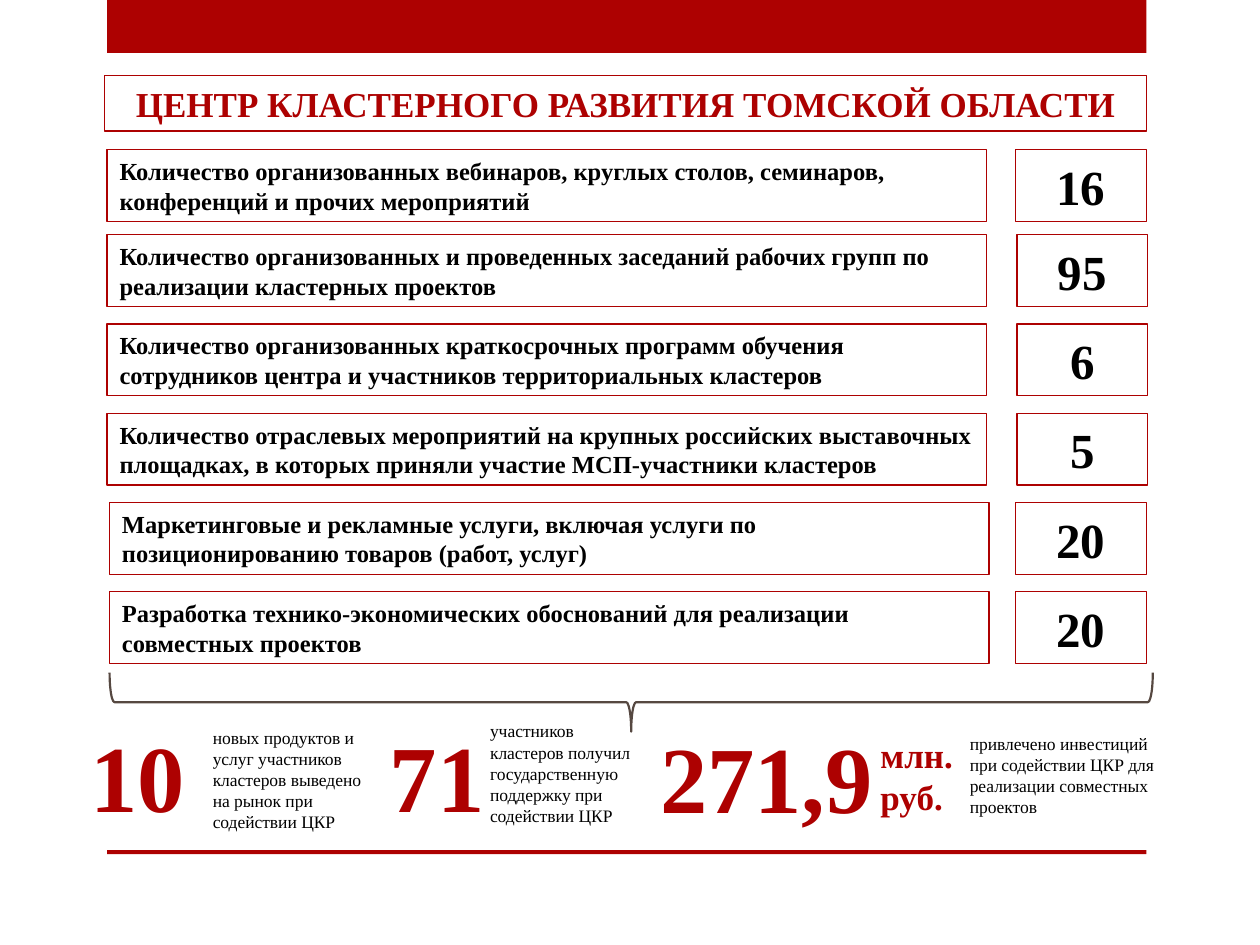
from dataclasses import dataclass

from pptx import Presentation
from pptx.dml.color import RGBColor
from pptx.enum.shapes import MSO_SHAPE
from pptx.enum.text import MSO_ANCHOR, MSO_AUTO_SIZE, PP_ALIGN
from pptx.slide import Slide
from pptx.util import Cm, Pt

RED = RGBColor(0xAD, 0x01, 0x01)
BROWN = RGBColor(0x56, 0x48, 0x41)
BLACK = RGBColor(0x00, 0x00, 0x00)

TITLE = "ЦЕНТР КЛАСТЕРНОГО РАЗВИТИЯ ТОМСКОЙ ОБЛАСТИ"

# label, value, label left, value left
INDICATORS = [
    ("Количество организованных вебинаров, круглых столов, семинаров, "
     "конференций и прочих мероприятий", "16", 2.16, 20.47),
    ("Количество организованных и проведенных заседаний рабочих групп по "
     "реализации кластерных проектов", "95", 2.16, 20.5),
    ("Количество организованных краткосрочных программ обучения "
     "сотрудников центра и участников территориальных кластеров", "6", 2.16, 20.5),
    ("Количество отраслевых мероприятий на крупных российских выставочных "
     "площадках, в которых приняли участие МСП-участники кластеров", "5", 2.16, 20.5),
    ("Маркетинговые и рекламные услуги, включая услуги по "
     "позиционированию товаров (работ, услуг)", "20", 2.21, 20.47),
    ("Разработка технико-экономических обоснований для реализации "
     "совместных проектов", "20", 2.21, 20.47),
]
FIRST_ROW_TOP = 3.02
SECOND_ROW_TOP = 4.73
ROW_PITCH = 1.8
ROW_HEIGHT = 1.45

# number, left, top, width, alignment
RESULT_NUMBERS = [
    ("10", 1.45, 14.35, 2.64, PP_ALIGN.CENTER),
    ("71", 7.49, 14.35, 2.64, PP_ALIGN.CENTER),
    ("271,9", 13.06, 14.38, 5.13, PP_ALIGN.LEFT),
]

# caption, left, top, width, height
RESULT_CAPTIONS = [
    ("новых продуктов и услуг участников кластеров выведено на рынок "
     "при содействии ЦКР", 4.04, 14.53, 3.66, 2.39),
    ("участников кластеров получил государственную поддержку "
     "при содействии ЦКР", 9.63, 14.4, 3.43, 2.39),
    ("привлечено инвестиций при содействии ЦКР для реализации "
     "совместных проектов", 19.3, 14.66, 4.24, 1.96),
]


@dataclass
class SlideBuilder:
    slide: Slide
    font: str = "Times New Roman"
    accent: RGBColor = RED
    outline: float = 0.75

    def fill_text(self, shape, lines, size, color=BLACK, bold=True,
                  align=PP_ALIGN.LEFT, anchor=MSO_ANCHOR.MIDDLE):
        frame = shape.text_frame
        frame.word_wrap = True
        frame.auto_size = MSO_AUTO_SIZE.NONE
        frame.vertical_anchor = anchor
        for index, line in enumerate(lines):
            paragraph = frame.add_paragraph() if index else frame.paragraphs[0]
            paragraph.alignment = align
            run = paragraph.add_run()
            run.text = line
            run.font.name = self.font
            run.font.size = Pt(size)
            run.font.bold = bold
            run.font.color.rgb = color

    def title(self, text, left, top, width, height):
        shape = self.slide.shapes.title
        shape.left, shape.top = Cm(left), Cm(top)
        shape.width, shape.height = Cm(width), Cm(height)
        shape.line.color.rgb = self.accent
        shape.line.width = Pt(self.outline)
        self.fill_text(shape, [text], 20, self.accent, align=PP_ALIGN.CENTER)

    def shape(self, kind, left, top, width, height):
        shape = self.slide.shapes.add_shape(
            kind, Cm(left), Cm(top), Cm(width), Cm(height))
        shape.shadow.inherit = False
        return shape

    def band(self, left, top, width, height):
        shape = self.shape(MSO_SHAPE.RECTANGLE, left, top, width, height)
        shape.fill.solid()
        shape.fill.fore_color.rgb = self.accent
        shape.line.fill.background()

    def box(self, text, left, top, width, height, size, align=PP_ALIGN.LEFT):
        shape = self.shape(MSO_SHAPE.RECTANGLE, left, top, width, height)
        shape.fill.background()
        shape.line.color.rgb = self.accent
        shape.line.width = Pt(self.outline)
        self.fill_text(shape, [text], size, align=align)

    def brace_down(self, left, top, width, height):
        """Add a left brace turned so that it spans the width and points down."""
        shape = self.shape(MSO_SHAPE.LEFT_BRACE, left + (width - height) / 2,
                           top + (height - width) / 2, height, width)
        shape.rotation = 270
        shape.fill.background()
        shape.line.color.rgb = BROWN
        shape.line.width = Pt(1.25)

    def text(self, lines, left, top, width, height, size, **style):
        shape = self.slide.shapes.add_textbox(
            Cm(left), Cm(top), Cm(width), Cm(height))
        self.fill_text(shape, lines, size, anchor=MSO_ANCHOR.TOP, **style)


def main():
    presentation = Presentation()
    presentation.slide_width, presentation.slide_height = Cm(25.4), Cm(19.05)
    title_only = presentation.slide_layouts[5]
    builder = SlideBuilder(presentation.slides.add_slide(title_only))

    builder.band(2.16, 0, 20.95, 1.07)
    builder.band(2.16, 17.14, 20.95, 0.08)
    builder.title(TITLE, 2.11, 1.52, 21, 1.12)

    for row, (label, value, label_left, value_left) in enumerate(INDICATORS):
        top = SECOND_ROW_TOP + (row - 1) * ROW_PITCH if row else FIRST_ROW_TOP
        builder.box(label, label_left, top, 17.73, ROW_HEIGHT, 14)
        builder.box(value, value_left, top, 2.64, ROW_HEIGHT, 28, PP_ALIGN.CENTER)

    builder.brace_down(2.21, 13.56, 21.03, 1.19)

    for number, left, top, width, align in RESULT_NUMBERS:
        builder.text([number], left, top, width, 2.57, 54, color=RED, align=align)
    builder.text(["млн.", "руб."], 17.5, 14.66, 2.74, 1.96, 20, color=RED)
    for caption, left, top, width, height in RESULT_CAPTIONS:
        builder.text([caption], left, top, width, height, 10, bold=False)

    presentation.save("out.pptx")


if __name__ == "__main__":
    main()
